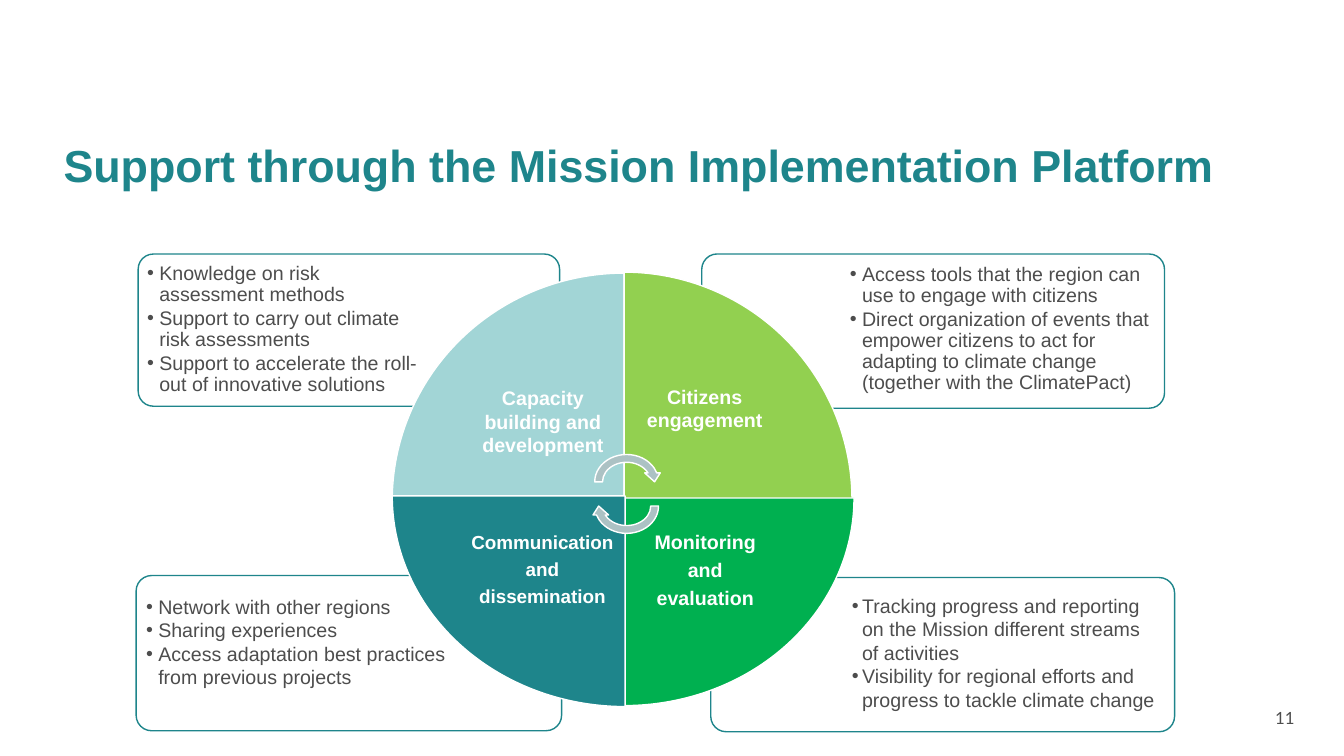
import pptx
import pptx.util
import pptx.dml.color
import pptx.enum.shapes
import pptx.enum.text
import pptx.oxml.ns
from lxml import etree

SCALE = 9144  # EMU per px, 100 px to the inch
HUES = {
    "teal": "1E858B", "mint": "A2D5D6", "lime": "92D050", "green": "00B050",
    "steel": "ACC2C4", "white": "FFFFFF", "text": "4D4D4D",
}
KIND = pptx.enum.shapes.MSO_SHAPE
ALIGN = pptx.enum.text.PP_ALIGN
ANCHOR = pptx.enum.text.MSO_ANCHOR

CARDS = [(705, 573, 460, 153), (135, 571, 422, 154),
         (696, 252, 459, 153), (137, 252, 418, 151)]

# box, insets, (margin, hang), line spacing, space after, items
LISTS = [
    ((140, 255, 286, 106), (6, 6), (12, 12), 0.9, 2.1,
     ["Knowledge on risk assessment methods",
      "Support to carry out climate risk assessments",
      "Support to accelerate the roll-out of innovative solutions"]),
    ((837, 256, 315, 108), (6, 6), (12, 12), 0.9, 2.1,
     ["Access tools that the region can use to engage with citizens",
      "Direct organization of events that empower citizens to act for "
      "adapting to climate change (together with the ClimatePact)"]),
    ((116, 585, 354, 104), (10, 5), (31, 12), 1, 0,
     ["Network with other regions", "Sharing experiences",
      "Access adaptation best practices from previous projects"]),
    ((806, 584, 350, 128), (10, 5), (39, 10), 1, 0,
     ["Tracking progress and reporting on the Mission different streams "
      "of activities",
      "Visibility for regional efforts and progress to tackle climate change"]),
]

# box, turn, hue
WEDGES = [
    ((389, 271, 230, 226), 0, "mint"),
    ((619, 270, 226, 226), 90, "lime"),
    ((619, 494, 228, 206), 180, "green"),
    ((400, 481, 209, 231), 270, "teal"),
]

# box, size, line spacing, space after, lines
LABELS = [
    ((457, 338, 163, 160), 14, 1, 0, ["Capacity building and development"]),
    ((619, 325, 160, 160), 14, 1, 0, ["Citizens engagement"]),
    ((619, 494, 161, 146), 14, 0.9, 4.9, ["Monitoring", "and", "evaluation"]),
    ((456, 492, 164, 148), 13.5, 0.9, 4.9,
     ["Communication", "and", "dissemination"]),
]


def px(num):
    return pptx.util.Emu(num * SCALE)


def rgb(hue):
    return pptx.dml.color.RGBColor.from_string(HUES[hue])


def place(shape, box):
    shape.left, shape.top, shape.width, shape.height = map(px, box)


def frame(shape, pads, anchor):
    """Set insets (side, top, bottom), wrapping and anchor of the text."""
    text = shape.text_frame
    text.word_wrap = True
    text.auto_size = pptx.enum.text.MSO_AUTO_SIZE.NONE
    text.vertical_anchor = anchor
    side, top, foot = pads
    text.margin_left = text.margin_right = px(side)
    text.margin_top, text.margin_bottom = px(top), px(foot)
    return text


def bullet(para, margin, hang):
    props = para._p.get_or_add_pPr()
    props.set("marL", str(margin * SCALE))
    props.set("indent", str(-hang * SCALE))
    for tag, key, val in (("a:buFont", "typeface", "Arial"),
                          ("a:buChar", "char", "•")):
        etree.SubElement(props, pptx.oxml.ns.qn(tag)).set(key, val)


def write(text, lines, size, hue, bold=False, align=ALIGN.LEFT,
          space=1, after=0, hang=None, face="Arial"):
    for num, line in enumerate(lines):
        para = text.add_paragraph() if num else text.paragraphs[0]
        if hang:
            bullet(para, *hang)
        para.alignment = align
        para.line_spacing = space
        para.space_before = pptx.util.Pt(0)
        para.space_after = pptx.util.Pt(after)
        run = para.add_run()
        run.text = line
        font = run.font
        font.name, font.size, font.bold = face, pptx.util.Pt(size), bold
        font.color.rgb = rgb(hue)


def draw(slide, kind, box, fill, line, turn=0):
    shape = slide.shapes.add_shape(kind, *map(px, box))
    shape.shadow.inherit = False
    shape.rotation = turn
    shape.fill.solid()
    shape.fill.fore_color.rgb = rgb(fill)
    shape.line.color.rgb = rgb(line)
    shape.line.width = pptx.util.Pt(1)
    return shape


def label(slide, box, size, space, after, lines):
    shape = slide.shapes.add_textbox(*map(px, box))
    text = frame(shape, (11, 11, 11), ANCHOR.MIDDLE)
    write(text, lines, size, "white", True, ALIGN.CENTER, space, after)


def fill_list(slide, holder, box, pads, hang, space, after, items):
    """Fill a body placeholder and lift it above the cards."""
    place(holder, box)
    side, top = pads
    text = frame(holder, (side, top, top), ANCHOR.TOP)
    write(text, items, 14, "text", space=space, after=after, hang=hang)
    slide.shapes._spTree.append(holder._element)


def main():
    deck = pptx.Presentation()
    deck.slide_width, deck.slide_height = px(1333), px(750)
    slide = deck.slides.add_slide(deck.slide_layouts.get_by_name("Comparison"))
    title, *bodies = slide.placeholders

    place(title, (53, 24, 1208, 167))
    write(frame(title, (10, 5, 0), ANCHOR.BOTTOM),
          ["Support through the Mission Implementation Platform"],
          32, "teal", True, space=0.9)

    for box in CARDS:
        card = draw(slide, KIND.ROUNDED_RECTANGLE, box, "white", "teal")
        card.adjustments[0] = 0.1
    for holder, spec in zip(bodies, LISTS):
        fill_list(slide, holder, *spec)
    for box, turn, hue in WEDGES:
        draw(slide, KIND.PIE_WEDGE, box, hue, "white", turn)
    for item in LABELS:
        label(slide, *item)
    for top, turn in ((447, 0), (471, 180)):
        draw(slide, KIND.CIRCULAR_ARROW, (586, top, 71, 62),
             "steel", "white", turn)

    page = slide.shapes.add_textbox(*map(px, (1255, 697, 70, 40)))
    write(frame(page, (10, 5, 5), ANCHOR.TOP), ["11"], 12, "text", face="Lato")
    deck.save("out.pptx")


if __name__ == "__main__":
    main()
